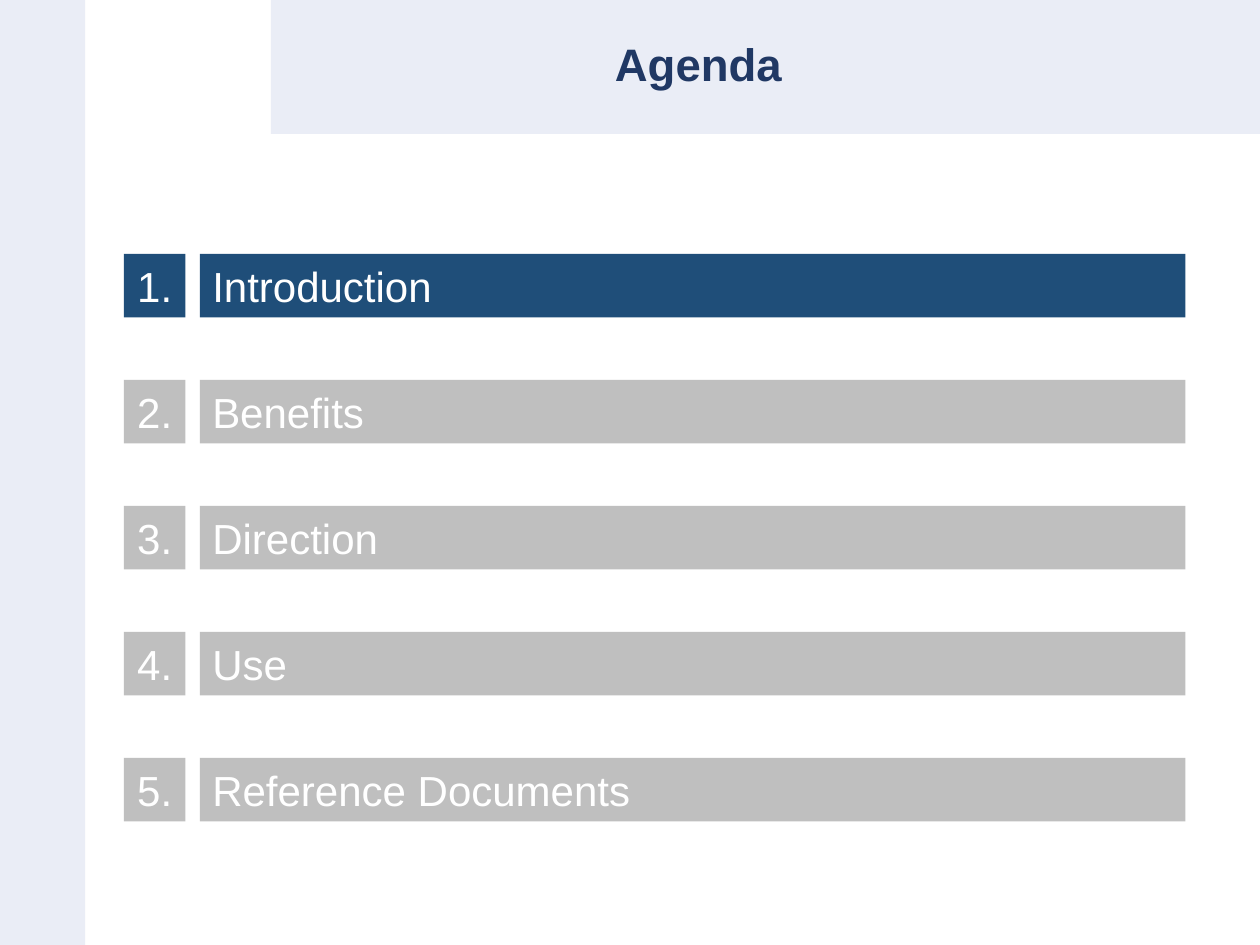
from pptx import Presentation
from pptx.dml.color import RGBColor
from pptx.enum.shapes import MSO_SHAPE
from pptx.enum.text import MSO_ANCHOR, MSO_AUTO_SIZE, PP_ALIGN
from pptx.util import Cm, Pt

FONT = "Arial"
PALE, NAVY, BLUE, GREY, WHITE = "EAEDF6", "203864", "1F4E79", "BFBFBF", "FFFFFF"
TOPICS = ["Introduction", "Benefits", "Direction", "Use", "Reference Documents"]
CURRENT = 1
ROW_TOP, ROW_STEP, ROW_HEIGHT = 5.12, 2.54, 1.28
NUMBER_LEFT, NUMBER_WIDTH = 2.5, 1.24
TOPIC_LEFT, TOPIC_WIDTH = 4.03, 19.87


def color(value):
    return RGBColor.from_string(value)


def write(sp, text, size, fill, align, bold=False):
    tf = sp.text_frame
    tf.text = text
    tf.word_wrap = True
    tf.vertical_anchor = MSO_ANCHOR.MIDDLE
    p = tf.paragraphs[0]
    p.alignment = align
    r = p.runs[0]
    r.font.name = FONT
    r.font.size = Pt(size)
    r.font.bold = bold
    r.font.color.rgb = color(fill)
    return p


def add_block(s, left, top, width, height, fill):
    sp = s.shapes.add_shape(MSO_SHAPE.RECTANGLE, Cm(left), Cm(top), Cm(width), Cm(height))
    sp.shadow.inherit = False
    sp.fill.solid()
    sp.fill.fore_color.rgb = color(fill)
    sp.line.fill.background()
    return sp


def add_title(s, text):
    sp = s.shapes.add_textbox(Cm(4.03), Cm(0), Cm(20.1), Cm(2.7))
    p = write(sp, text, 26, NAVY, PP_ALIGN.CENTER, bold=True)
    p.line_spacing = 0.9


def add_label(s, left, top, width, text, fill, align):
    sp = add_block(s, left, top, width, ROW_HEIGHT, fill)
    write(sp, text, 24, WHITE, align)
    sp.text_frame.auto_size = MSO_AUTO_SIZE.SHAPE_TO_FIT_TEXT


def add_agenda_row(s, number, topic):
    top = ROW_TOP + (number - 1) * ROW_STEP
    fill = BLUE if number == CURRENT else GREY
    add_label(s, TOPIC_LEFT, top, TOPIC_WIDTH, topic, fill, PP_ALIGN.LEFT)
    add_label(s, NUMBER_LEFT, top, NUMBER_WIDTH, f"{number}.", fill, PP_ALIGN.CENTER)


def main():
    prs = Presentation()
    prs.slide_width, prs.slide_height = Cm(25.4), Cm(19.05)
    s = prs.slides.add_slide(prs.slide_layouts[6])
    add_block(s, 0, 0, 1.72, 19.05, PALE)
    add_block(s, 5.46, 0, 19.94, 2.7, PALE)
    add_title(s, "Agenda")
    for number, topic in enumerate(TOPICS, start=1):
        add_agenda_row(s, number, topic)
    prs.save("out.pptx")


if __name__ == "__main__":
    main()
